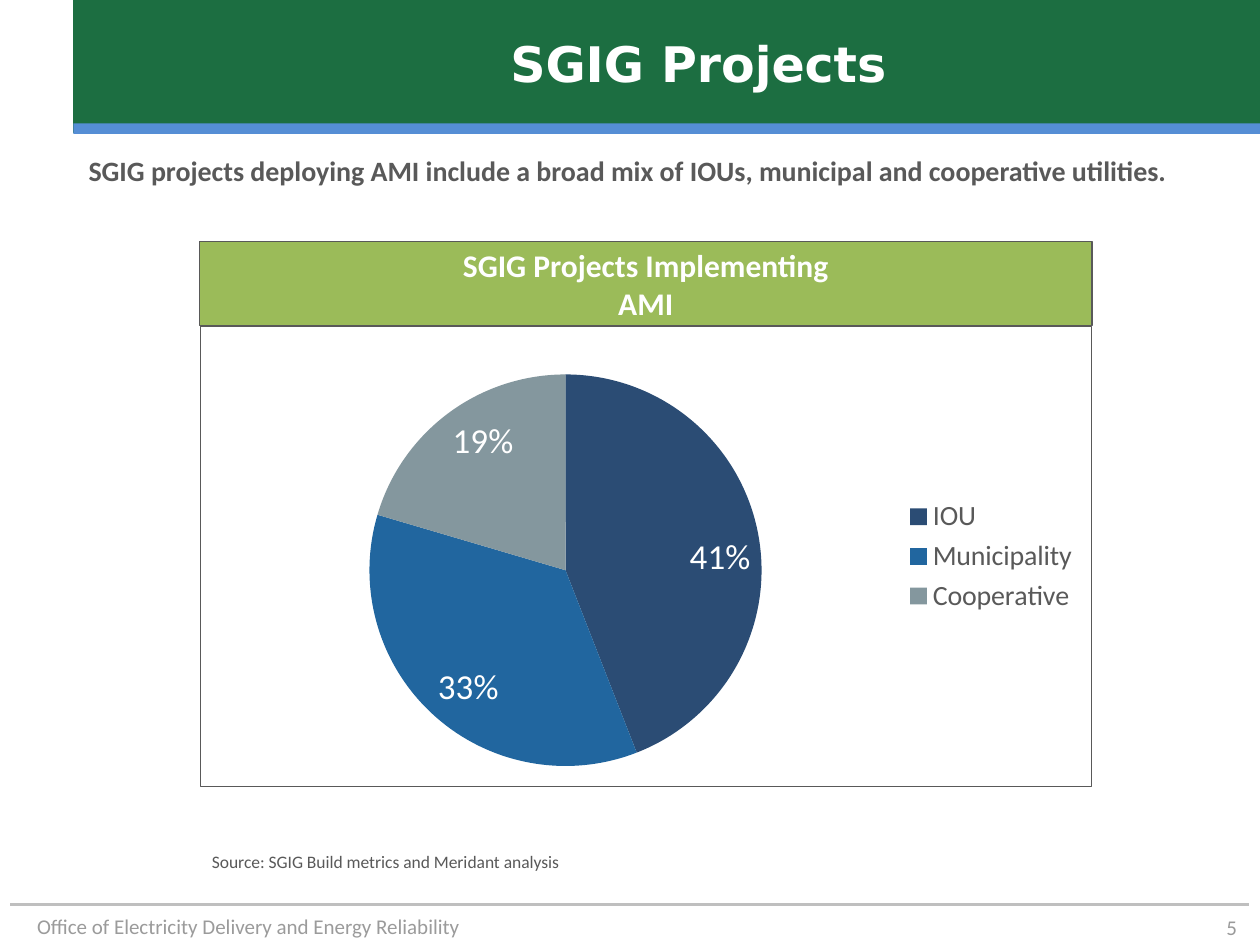
from lxml import etree
from pptx import Presentation
from pptx.chart.data import CategoryChartData
from pptx.dml.color import RGBColor
from pptx.enum.chart import XL_CHART_TYPE, XL_LABEL_POSITION, XL_LEGEND_POSITION
from pptx.enum.shapes import MSO_CONNECTOR, MSO_SHAPE
from pptx.enum.text import MSO_ANCHOR, PP_ALIGN
from pptx.oxml import parse_xml
from pptx.oxml.ns import nsdecls, qn
from pptx.util import Pt

PIE = XL_CHART_TYPE.PIE
INSIDE_END = XL_LABEL_POSITION.INSIDE_END
LEGEND_RIGHT = XL_LEGEND_POSITION.RIGHT
STRAIGHT = MSO_CONNECTOR.STRAIGHT
RECTANGLE = MSO_SHAPE.RECTANGLE
TOP, MIDDLE = MSO_ANCHOR.TOP, MSO_ANCHOR.MIDDLE
LEFT, CENTER, RIGHT = PP_ALIGN.LEFT, PP_ALIGN.CENTER, PP_ALIGN.RIGHT

WHITE = RGBColor(0xFF, 0xFF, 0xFF)
BAND_GREEN = RGBColor(0x1C, 0x6E, 0x41)
STRIPE_BLUE = RGBColor(0x55, 0x8E, 0xD5)
HEADING_GREEN = RGBColor(0x9B, 0xBB, 0x59)
DARK_GREY = RGBColor(0x59, 0x59, 0x59)
FOOTER_GREY = RGBColor(0x9B, 0x9B, 0x9B)
NUMBER_GREY = RGBColor(0x9A, 0x9A, 0x9A)
RULE_GREY = RGBColor(0xBF, 0xBF, 0xBF)

SLICES = [
    ("IOU", 0.41, RGBColor(0x2B, 0x4C, 0x74)),
    ("Municipality", 0.33, RGBColor(0x21, 0x66, 0x9F)),
    ("Cooperative", 0.19, RGBColor(0x84, 0x97, 0x9E)),
]
BODY_FONT = "Calibri"
TITLE_FONT = "DejaVu Sans"
STANDARD_INSETS = (7.2, 3.6, 7.2, 3.6)
EVEN_INSETS = (7.2, 7.2, 7.2, 7.2)
PANEL_LEFT, PANEL_WIDTH = 114, 510
HEADING_TOP, HEADING_HEIGHT = 138, 48


def points(*lengths):
    return [Pt(length) for length in lengths]


def style_font(font, size, color, bold=False, name=BODY_FONT):
    font.name = name
    font.size = Pt(size)
    font.bold = bold
    font.color.rgb = color


def write(frame, text, size, color, align=LEFT, anchor=TOP, bold=False,
          name=BODY_FONT, insets=STANDARD_INSETS, wrap=True):
    """Fill a text frame, one paragraph per line of text."""
    frame.text = text
    frame.word_wrap = wrap
    frame.vertical_anchor = anchor
    (frame.margin_left, frame.margin_top,
     frame.margin_right, frame.margin_bottom) = points(*insets)
    for paragraph in frame.paragraphs:
        paragraph.alignment = align
        for run in paragraph.runs:
            style_font(run.font, size, color, bold, name)


def add_text(slide, box, text, size, color, **options):
    frame = slide.shapes.add_textbox(*points(*box)).text_frame
    write(frame, text, size, color, **options)


def add_rectangle(slide, box, fill, outline=None, outline_width=1):
    rectangle = slide.shapes.add_shape(RECTANGLE, *points(*box))
    rectangle.shadow.inherit = False
    rectangle.fill.solid()
    rectangle.fill.fore_color.rgb = fill
    if outline is None:
        rectangle.line.fill.background()
    else:
        rectangle.line.color.rgb = outline
        rectangle.line.width = Pt(outline_width)
    return rectangle


def add_rule(slide, left, right, y, color, width):
    rule = slide.shapes.add_connector(STRAIGHT, *points(left, y, right, y))
    rule.line.color.rgb = color
    rule.line.width = Pt(width)
    etree.SubElement(rule._element.spPr, qn("a:effectLst"))


def outline_chart(chart, color, width):
    border = parse_xml(
        f'<c:spPr {nsdecls("c", "a")}><a:noFill/><a:ln w="{Pt(width)}"><a:solidFill>'
        f'<a:srgbClr val="{color}"/></a:solidFill></a:ln></c:spPr>')
    chart._chartSpace.find(qn("c:chart")).addnext(border)


def place_plot(chart, x, y, w, h):
    """Fix the plot area, in fractions of the chart's size."""
    plot_area = chart._chartSpace.chart.plotArea
    for old_layout in plot_area.findall(qn("c:layout")):
        plot_area.remove(old_layout)
    sizes = "".join(f'<c:{key} val="{value}"/>'
                    for key, value in (("x", x), ("y", y), ("w", w), ("h", h)))
    plot_area.insert(0, parse_xml(
        f'<c:layout {nsdecls("c")}><c:manualLayout><c:layoutTarget val="inner"/>'
        f'<c:xMode val="edge"/><c:yMode val="edge"/>{sizes}'
        f'</c:manualLayout></c:layout>'))


def add_pie(slide, box):
    data = CategoryChartData(number_format="0%")
    data.categories = [name for name, _, _ in SLICES]
    data.add_series("Series 1", [share for _, share, _ in SLICES])
    chart = slide.shapes.add_chart(PIE, *points(*box), data).chart
    chart.has_title = False
    style_font(chart.font, 10, DARK_GREY)

    chart.has_legend = True
    chart.legend.position = LEGEND_RIGHT
    chart.legend.include_in_layout = False
    style_font(chart.legend.font, 16, DARK_GREY)

    plot = chart.plots[0]
    plot.vary_by_categories = True
    for index, (_, _, color) in enumerate(SLICES):
        fill = plot.series[0].points[index].format.fill
        fill.solid()
        fill.fore_color.rgb = color

    plot.has_data_labels = True
    labels = plot.data_labels
    labels.show_value = True
    labels.show_percentage = False
    labels.number_format = "0%"
    labels.number_format_is_linked = False
    labels.position = INSIDE_END
    style_font(labels.font, 20, WHITE)

    outline_chart(chart, DARK_GREY, 0.75)
    place_plot(chart, 0.19, 0.1, 0.44, 0.86)


def add_header(slide):
    add_rectangle(slide, (42, 0, 678, 75.6), BAND_GREEN, BAND_GREEN)
    add_rectangle(slide, (42, 70.5, 678, 6), STRIPE_BLUE)
    add_text(slide, (78, 0, 642, 72), "SGIG Projects", 28, WHITE,
             align=CENTER, anchor=MIDDLE, bold=True, name=TITLE_FONT)


def add_footer(slide):
    add_text(slide, (0, 518.4, 270, 21.6),
             "Office of Electricity Delivery and Energy Reliability",
             12, FOOTER_GREY, align=RIGHT)
    add_rule(slide, 6, 714, 517, RULE_GREY, 1.75)
    add_text(slide, (534, 519, 180, 21), "5", 12, NUMBER_GREY,
             align=RIGHT, anchor=MIDDLE, insets=(0, 0, 7.2, 0))


def add_chart_panel(slide):
    heading = add_rectangle(
        slide, (PANEL_LEFT, HEADING_TOP, PANEL_WIDTH, HEADING_HEIGHT),
        HEADING_GREEN, DARK_GREY, 0.75)
    write(heading.text_frame, "SGIG Projects Implementing\nAMI", 18, WHITE,
          align=CENTER, anchor=MIDDLE, bold=True, insets=EVEN_INSETS)
    add_pie(slide, (PANEL_LEFT, HEADING_TOP + HEADING_HEIGHT, PANEL_WIDTH, 264))
    add_text(slide, (PANEL_LEFT, 480, 252, 24),
             "Source: SGIG Build metrics and Meridant analysis",
             10, DARK_GREY, insets=EVEN_INSETS, wrap=False)


def main():
    presentation = Presentation()
    presentation.slide_width, presentation.slide_height = points(720, 540)
    slide = presentation.slides.add_slide(presentation.slide_layouts[6])
    add_header(slide)
    add_footer(slide)
    add_text(slide, (24, 84, 669.6, 48),
             "SGIG projects deploying AMI include a broad mix of IOUs, "
             "municipal and cooperative utilities.",
             16, DARK_GREY, align=CENTER, bold=True)
    add_chart_panel(slide)
    presentation.save("out.pptx")


if __name__ == "__main__":
    main()
